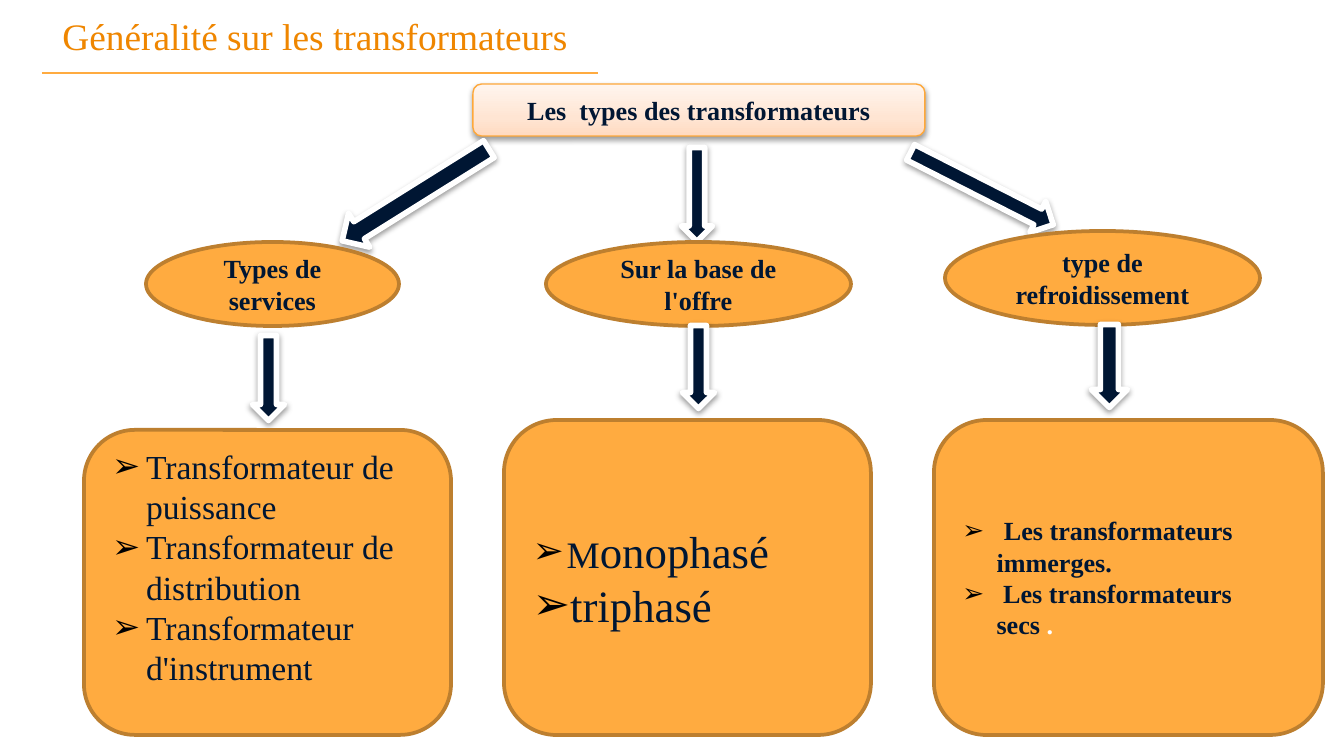
"""Build the slide on the types of transformers."""
from copy import deepcopy

from lxml.etree import SubElement
from pptx import Presentation
from pptx.dml.color import RGBColor
from pptx.enum.shapes import MSO_CONNECTOR, MSO_SHAPE
from pptx.enum.text import MSO_ANCHOR, MSO_AUTO_SIZE, PP_ALIGN
from pptx.oxml.ns import qn
from pptx.util import Pt

SCALE = 914400 / 134.4
FONT = "Times New Roman"
TITLE_ORANGE = RGBColor(0xEF, 0x86, 0x00)
ORANGE = RGBColor(0xFF, 0xAB, 0x40)
BROWN = RGBColor(0xBD, 0x7F, 0x2F)
HEADER_LINE = RGBColor(0xFE, 0xA8, 0x3A)
NAVY = RGBColor(0x00, 0x16, 0x33)
WHITE = RGBColor(0xFF, 0xFF, 0xFF)
BLACK = RGBColor(0x00, 0x00, 0x00)
HEADER_STOPS = [
    (0, RGBColor(0xFF, 0xDA, 0xC0)),
    (0.35, RGBColor(0xFF, 0xE5, 0xD3)),
    (1, RGBColor(0xFF, 0xF5, 0xEE)),
]

BRANCHES = [
    {
        "upper_arrow": (329, 175, 173, 40, 328),
        "ellipse": (146, 242, 253, 84),
        "label": "Types de services",
        "lower_arrow": (226, 362, 85, 32, 270),
        "card": (84, 430, 367, 305),
        "bottom_inset": 38,
        "items": [
            [("Transformateur de puissance", 18, False, FONT, NAVY)],
            [("Transformateur de distribution", 18, False, FONT, NAVY)],
            [("Transformateur d'instrument", 18, False, FONT, NAVY)],
        ],
    },
    {
        "upper_arrow": (650, 179, 94, 31, 270),
        "ellipse": (546, 242, 305, 84),
        "label": "Sur la base de l'offre",
        "lower_arrow": (657, 351, 83, 32, 270),
        "card": (504, 420, 367, 315),
        "bottom_inset": 7,
        "items": [
            [("M", 20, False, FONT, NAVY), ("onophasé", 24, False, FONT, NAVY)],
            [("triphasé", 24, False, FONT, NAVY)],
        ],
    },
    {
        "upper_arrow": (902, 171, 160, 35, 206.9),
        "ellipse": (945, 231, 315, 94),
        "label": "type de refroidissement",
        "lower_arrow": (1068, 348, 83, 36, 270),
        "card": (934, 420, 389, 315),
        "bottom_inset": 7,
        "items": [
            [(" ", 14, True, "Arial", WHITE),
             ("Les transformateurs immerges.", 14, True, FONT, NAVY)],
            [(" Les transformateurs secs ", 14, True, FONT, NAVY),
             (".", 14, True, FONT, WHITE)],
        ],
    },
]


def px(length):
    return round(length * SCALE)


def add_box(preset, box, fill, line, line_width, shadow=False):
    shape = slide.shapes.add_shape(preset, *map(px, box))
    shape.shadow.inherit = False
    shape.fill.solid()
    shape.fill.fore_color.rgb = fill
    shape.line.color.rgb = line
    shape.line.width = Pt(line_width)
    shape.text_frame.word_wrap = True
    shape.text_frame.vertical_anchor = MSO_ANCHOR.MIDDLE
    if shadow:
        effects = shape._element.spPr.find(qn("a:effectLst"))
        outer = SubElement(effects, qn("a:outerShdw"), blurRad=str(Pt(3.1)),
                           dist=str(Pt(1.6)), dir="5400000", rotWithShape="0")
        color = SubElement(outer, qn("a:srgbClr"), val=str(BLACK))
        SubElement(color, qn("a:alpha"), val="38000")
    return shape


presentation = Presentation()
presentation.slide_width = px(1344)
presentation.slide_height = px(756)
slide = presentation.slides.add_slide(presentation.slide_layouts[5])

title = slide.shapes.title
title.left, title.top, title.width, title.height = map(px, (42, 0, 556, 42))
frame = title.text_frame
frame.auto_size = MSO_AUTO_SIZE.NONE
frame.vertical_anchor = MSO_ANCHOR.TOP
frame.margin_left = frame.margin_top = frame.margin_right = frame.margin_bottom = px(13)
paragraph = frame.paragraphs[0]
paragraph.alignment = PP_ALIGN.CENTER
run = paragraph.add_run()
run.text = "Généralité sur les transformateurs "
run.font.name = FONT
run.font.size = Pt(20)
run.font.color.rgb = TITLE_ORANGE

rule = slide.shapes.add_connector(MSO_CONNECTOR.STRAIGHT, px(42), px(73), px(598), px(73))
rule.line.color.rgb = ORANGE
rule.line.width = Pt(0.75)
SubElement(rule._element.spPr, qn("a:effectLst"))

header = add_box(MSO_SHAPE.ROUNDED_RECTANGLE, (473, 84, 452, 52), WHITE, HEADER_LINE, 0.75, True)
header.fill.gradient()
header.fill.gradient_angle = 90
stop_list = header._element.spPr.find(".//" + qn("a:gsLst"))
stop_list.append(deepcopy(stop_list[0]))
for stop, (position, color) in zip(header.fill.gradient_stops, HEADER_STOPS):
    stop.position = position
    stop.color.rgb = color
labels = [(header, "Les  types des transformateurs")]

for branch in BRANCHES:
    *box, rotation = branch["upper_arrow"]
    arrow = add_box(MSO_SHAPE.LEFT_ARROW, box, NAVY, WHITE, 3, True)
    arrow.rotation = rotation
    ellipse = add_box(MSO_SHAPE.OVAL, branch["ellipse"], ORANGE, BROWN, 2)
    labels.append((ellipse, branch["label"]))
    *box, rotation = branch["lower_arrow"]
    arrow = add_box(MSO_SHAPE.LEFT_ARROW, box, NAVY, WHITE, 3, True)
    arrow.rotation = rotation

    card = add_box(MSO_SHAPE.ROUNDED_RECTANGLE, branch["card"], ORANGE, BROWN, 2)
    frame = card.text_frame
    frame.margin_bottom = px(branch["bottom_inset"])
    for index, runs in enumerate(branch["items"]):
        paragraph = frame.add_paragraph() if index else frame.paragraphs[0]
        paragraph.alignment = PP_ALIGN.LEFT
        properties = paragraph._p.get_or_add_pPr()
        properties.set("marL", str(px(34)))
        properties.set("indent", str(px(-34)))
        bullet_color = SubElement(properties, qn("a:buClr"))
        SubElement(bullet_color, qn("a:srgbClr"), val=str(BLACK))
        SubElement(properties, qn("a:buFont"), typeface="Arial")
        SubElement(properties, qn("a:buChar"), char="➢")
        for text, size, bold, font, color in runs:
            run = paragraph.add_run()
            run.text = text
            run.font.size = Pt(size)
            run.font.bold = bold
            run.font.name = font
            run.font.color.rgb = color

for shape, text in labels:
    paragraph = shape.text_frame.paragraphs[0]
    paragraph.alignment = PP_ALIGN.CENTER
    run = paragraph.add_run()
    run.text = text
    run.font.size = Pt(14)
    run.font.bold = True
    run.font.name = FONT
    run.font.color.rgb = NAVY

presentation.save("out.pptx")
